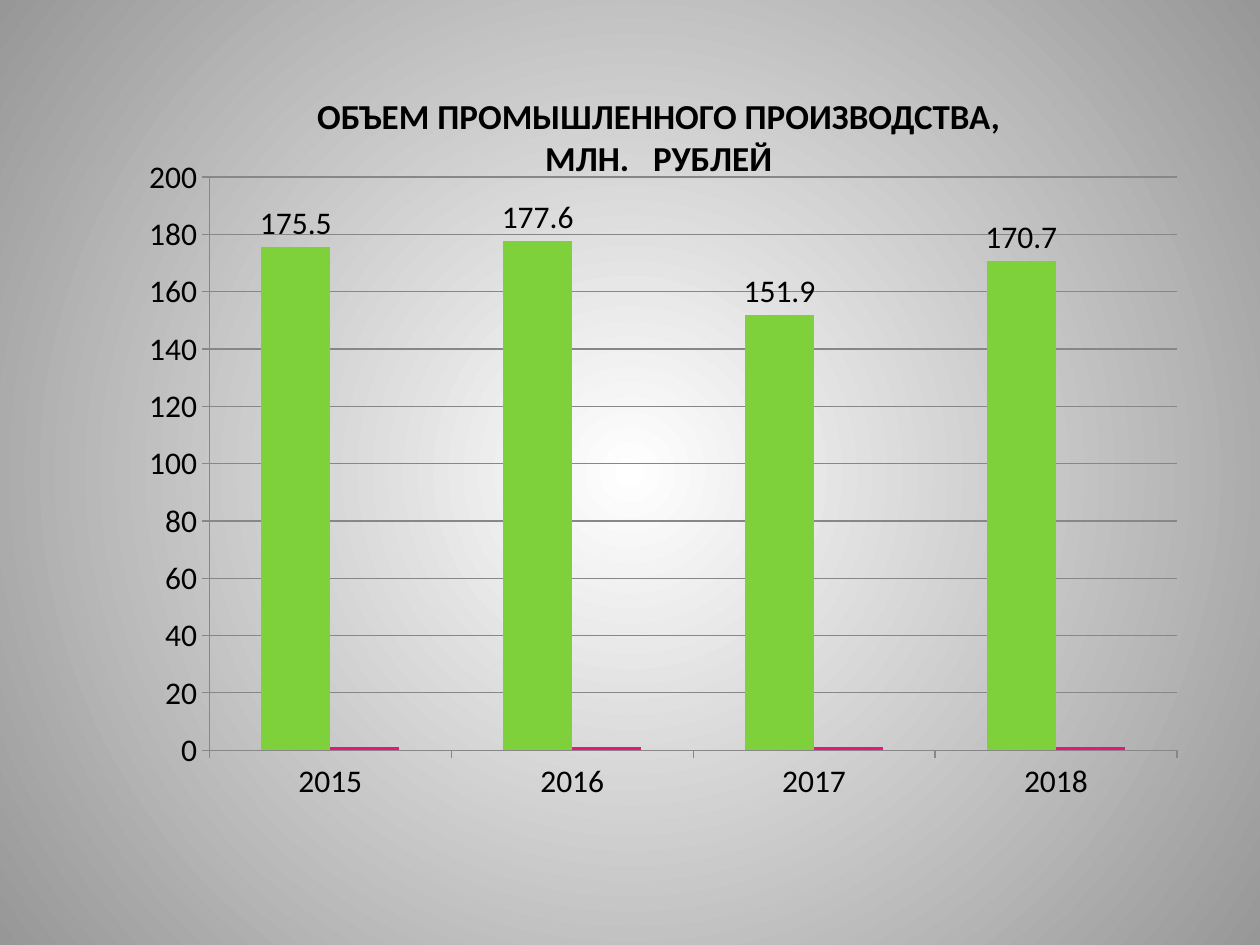
from dataclasses import dataclass

from lxml.etree import SubElement
from pptx import Presentation
from pptx.chart.data import CategoryChartData
from pptx.dml.color import RGBColor
from pptx.enum.chart import XL_CHART_TYPE as ChartType
from pptx.enum.chart import XL_LABEL_POSITION as LabelPosition
from pptx.enum.chart import XL_TICK_MARK as TickMark
from pptx.enum.text import MSO_ANCHOR as Anchor
from pptx.enum.text import PP_ALIGN as Align
from pptx.oxml.ns import qn
from pptx.util import Cm, Pt

# Each line is a list of words groups; groups are parted by a wide space.
TITLE_LINES = [["ОБЪЕМ ПРОМЫШЛЕННОГО ПРОИЗВОДСТВА,"], ["МЛН.", "РУБЛЕЙ"]]
YEARS = ["2015", "2016", "2017", "2018"]
SERIES = [
    {"name": "Series 1", "values": [175.5, 177.6, 151.9, 170.7], "color": "7FD13B", "labels": True},
    {"name": "Series 2", "values": [1, 1, 1, 1], "color": "EA157A", "labels": False},
]
TITLE_BOX = (Cm(3.96), Cm(1.78), Cm(18.64), Cm(1.96))
CHART_BOX = (Cm(1.19), Cm(2.77), Cm(22.81), Cm(14.3))
PLOT_AREA = {"x": 0.133, "y": 0.056, "w": 0.855, "h": 0.808}


@dataclass(frozen=True)
class Theme:
    font: str = "Calibri"
    text: str = "000000"
    grid: str = "878787"
    center: str = "FFFFFF"
    edge: str = "979797"
    title_size: int = 20
    chart_size: int = 18
    line_width: float = 0.75
    wide_space: int = 9


THEME = Theme()


def set_font(font, size, bold=False):
    font.name, font.size, font.bold = THEME.font, Pt(size), bold
    font.color.rgb = RGBColor.from_string(THEME.text)


def set_line(line):
    line.color.rgb = RGBColor.from_string(THEME.grid)
    line.width = Pt(THEME.line_width)


def paint_background(slide):
    """Fill the background with a circular gradient from the centre outwards."""
    fill = slide.background.fill
    fill.gradient()
    for stop, color in zip(fill.gradient_stops, (THEME.center, THEME.edge)):
        stop.color.rgb = RGBColor.from_string(color)
    linear = next(slide.element.iter(qn("a:lin")))
    gradient = linear.getparent()
    gradient.remove(linear)
    circle = SubElement(gradient, qn("a:path"), {"path": "circle"})
    SubElement(circle, qn("a:fillToRect"), {side: "50000" for side in "ltrb"})


def add_run(paragraph, text, size, bold=False, spacing=0):
    run = paragraph.add_run()
    run.text = text
    set_font(run.font, size, bold)
    if spacing:
        run.font._element.set("spc", str(spacing * 100))


def add_title(slide):
    frame = slide.shapes.add_textbox(*TITLE_BOX).text_frame
    frame.word_wrap = True
    frame.vertical_anchor = Anchor.TOP
    for index, groups in enumerate(TITLE_LINES):
        paragraph = frame.add_paragraph() if index else frame.paragraphs[0]
        paragraph.alignment = Align.CENTER
        for position, group in enumerate(groups):
            if position:
                add_run(paragraph, " ", THEME.title_size, bold=True, spacing=THEME.wide_space)
            add_run(paragraph, group, THEME.title_size, bold=True)


def place_plot_area(chart):
    """Fix the inner plot area as fractions of the chart frame."""
    plot_area = chart.element.chart.plotArea
    layout = plot_area.find(qn("c:layout"))
    if layout is None:
        layout = SubElement(plot_area, qn("c:layout"))
        plot_area.insert(0, layout)
    manual = SubElement(layout, qn("c:manualLayout"))
    settings = {"layoutTarget": "inner", "xMode": "edge", "yMode": "edge", **PLOT_AREA}
    for name, value in settings.items():
        SubElement(manual, qn(f"c:{name}"), {"val": str(value)})


def add_production_chart(slide):
    data = CategoryChartData()
    data.categories = YEARS
    for entry in SERIES:
        data.add_series(entry["name"], entry["values"])
    chart = slide.shapes.add_chart(ChartType.COLUMN_CLUSTERED, *CHART_BOX, data).chart
    chart.has_title = chart.has_legend = False
    set_font(chart.font, THEME.chart_size)
    place_plot_area(chart)

    plot = chart.plots[0]
    plot.vary_by_categories = False
    plot.gap_width, plot.overlap = 150, 0
    for series, entry in zip(plot.series, SERIES):
        series.format.fill.solid()
        series.format.fill.fore_color.rgb = RGBColor.from_string(entry["color"])
        if entry["labels"]:
            labels = series.data_labels
            labels.show_value = True
            labels.position = LabelPosition.OUTSIDE_END
            set_font(labels.font, THEME.chart_size)

    for axis in (chart.category_axis, chart.value_axis):
        axis.major_tick_mark, axis.minor_tick_mark = TickMark.OUTSIDE, TickMark.NONE
        set_line(axis.format.line)
    value_axis = chart.value_axis
    value_axis.minimum_scale, value_axis.maximum_scale, value_axis.major_unit = 0, 200, 20
    value_axis.has_major_gridlines = True
    set_line(value_axis.major_gridlines.format.line)


def main():
    presentation = Presentation()
    presentation.slide_width, presentation.slide_height = Cm(25.4), Cm(19.05)
    slide = presentation.slides.add_slide(presentation.slide_layouts[6])
    paint_background(slide)
    add_title(slide)
    add_production_chart(slide)
    presentation.save("out.pptx")


if __name__ == "__main__":
    main()
